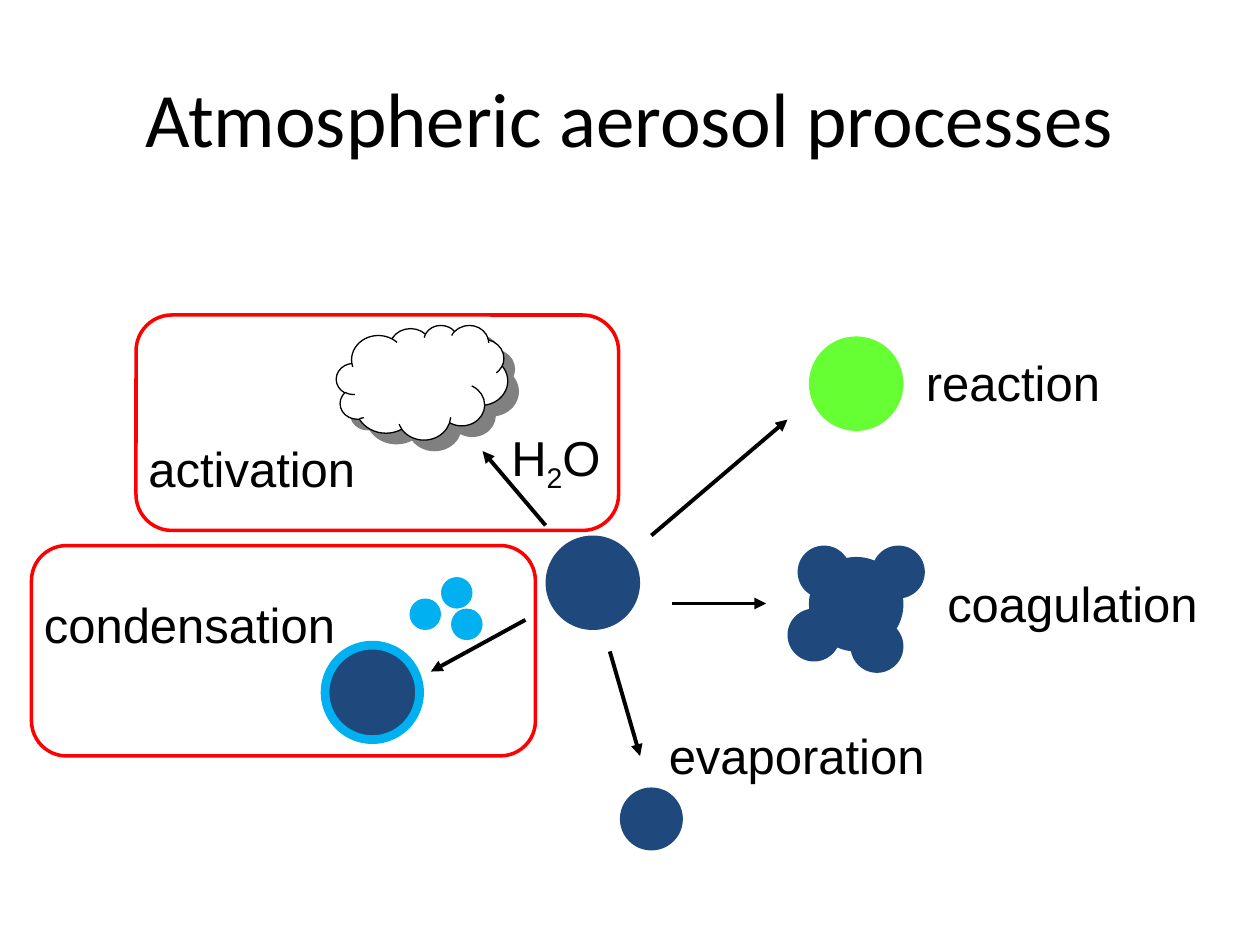
import dataclasses
import typing

import lxml.etree
import pptx
import pptx.dml.color
import pptx.enum.shapes
import pptx.enum.text
import pptx.oxml.ns
import pptx.util

Inches = pptx.util.Inches
Pt = pptx.util.Pt
Preset = pptx.enum.shapes.MSO_SHAPE


@dataclasses.dataclass(frozen=True)
class Theme:
    """Colours, fonts and sizes of the slide."""
    ink: str = "000000"
    paper: str = "FFFFFF"
    particle: str = "1F497D"
    vapour: str = "00B0F0"
    reacted: str = "66FF33"
    highlight: str = "FF0000"
    shade: str = "808080"
    title_font: str = "Calibri"
    label_font: str = "Arial"
    title_size: float = 44
    label_size: float = 28
    hairline: float = 0.75
    frame_line: float = 2
    arrow_line: float = 2.25
    coating_line: float = 5


THEME = Theme()


class Outline(typing.NamedTuple):
    colour: str
    width: float


class Figure(typing.NamedTuple):
    left: float
    top: float
    width: float
    height: float
    fill: typing.Optional[str] = None
    outline: typing.Optional[Outline] = None
    preset: Preset = Preset.OVAL


class Arrow(typing.NamedTuple):
    start: tuple[float, float]
    end: tuple[float, float]


class Label(typing.NamedTuple):
    left: float
    top: float
    width: float
    wording: tuple[str, ...]  # every second piece is a subscript


def disc(left: float, top: float, size: float, fill: str,
         outline: typing.Optional[Outline] = None) -> Figure:
    return Figure(left, top, size, size, fill, outline)


def rgb(colour: str) -> pptx.dml.color.RGBColor:
    return pptx.dml.color.RGBColor.from_string(colour)


def apply_format(target: typing.Any, values: dict[str, typing.Any]) -> None:
    for name, value in values.items():
        setattr(target, name, value)


def format_font(font: typing.Any, family: str, size: float) -> None:
    apply_format(font, {"name": family, "size": Pt(size)})
    font.color.rgb = rgb(THEME.ink)


def add_xml(parent: typing.Any, tag: str, **attributes: str) -> typing.Any:
    return lxml.etree.SubElement(parent, pptx.oxml.ns.qn(tag), attributes)


def draw_figure(shapes: typing.Any, figure: Figure) -> typing.Any:
    bounds = map(Inches, (figure.left, figure.top, figure.width, figure.height))
    shape = shapes.add_shape(figure.preset, *bounds)
    shape.shadow.inherit = False
    if figure.fill:
        shape.fill.solid()
        shape.fill.fore_color.rgb = rgb(figure.fill)
    else:
        shape.fill.background()
    if figure.outline:
        shape.line.color.rgb = rgb(figure.outline.colour)
        shape.line.width = Pt(figure.outline.width)
    else:
        shape.line.fill.background()
    return shape


def draw_cloud(shapes: typing.Any, figure: Figure) -> None:
    cloud = draw_figure(shapes, figure)
    effects = cloud._element.spPr.find(pptx.oxml.ns.qn("a:effectLst"))
    shadow = add_xml(effects, "a:outerShdw", blurRad="0", dist=str(Pt(8.5)),
                     dir=str(45 * 60000), algn="ctr", rotWithShape="0")
    add_xml(shadow, "a:srgbClr", val=THEME.shade)


def draw_arrow(shapes: typing.Any, arrow: Arrow) -> None:
    line = shapes.add_connector(pptx.enum.shapes.MSO_CONNECTOR.STRAIGHT,
                                *map(Inches, arrow.start + arrow.end))
    line.line.color.rgb = rgb(THEME.ink)
    line.line.width = Pt(THEME.arrow_line)
    add_xml(line.line._get_or_add_ln(), "a:tailEnd", type="triangle")
    add_xml(line._element.spPr, "a:effectLst")


def draw_label(shapes: typing.Any, label: Label) -> None:
    box = shapes.add_textbox(*map(Inches, (label.left, label.top, label.width, 0.57)))
    apply_format(box.text_frame, {
        "word_wrap": False,
        "auto_size": pptx.enum.text.MSO_AUTO_SIZE.SHAPE_TO_FIT_TEXT,
    })
    for index, piece in enumerate(label.wording):
        run = box.text_frame.paragraphs[0].add_run()
        run.text = piece
        format_font(run.font, THEME.label_font, THEME.label_size)
        if index % 2:
            run._r.get_or_add_rPr().set("baseline", "-25000")


def draw_title(slide: typing.Any, wording: str) -> None:
    title = slide.shapes.title
    apply_format(title, {"left": Inches(0.5), "top": Inches(0.3),
                         "width": Inches(9), "height": Inches(1.25)})
    title.text_frame.text = wording
    title.text_frame.vertical_anchor = pptx.enum.text.MSO_ANCHOR.MIDDLE
    heading = title.text_frame.paragraphs[0]
    heading.alignment = pptx.enum.text.PP_ALIGN.CENTER
    format_font(heading.runs[0].font, THEME.title_font, THEME.title_size)


FRAME = Outline(THEME.highlight, THEME.frame_line)
COATING = Outline(THEME.vapour, THEME.coating_line)
CLOUD = Figure(2.67, 2.58, 1.36, 0.91, THEME.paper,
               Outline(THEME.ink, THEME.hairline), Preset.CLOUD)
ATTACHED = [(6.33, 4.33), (6.92, 4.33), (6.75, 4.92), (6.25, 4.83)]
VAPOUR = [(3.25, 4.75), (3.5, 4.58), (3.58, 4.83)]

PARTICLES = [
    disc(4.33, 4.25, 0.75, THEME.particle),  # starting aerosol
    disc(6.42, 4.42, 0.75, THEME.particle),  # coagulation
    *(disc(left, top, 0.42, THEME.particle) for left, top in ATTACHED),
    disc(4.92, 6.25, 0.5, THEME.particle),  # evaporation
    *(disc(left, top, 0.25, THEME.vapour) for left, top in VAPOUR),
    disc(2.58, 5.12, 0.75, THEME.particle, COATING),  # condensation
    disc(6.42, 2.67, 0.75, THEME.reacted),  # reaction
]
ARROWS = [
    Arrow((5.33, 4.79), (6.08, 4.79)),  # coagulation
    Arrow((4.33, 4.17), (3.83, 3.58)),  # activation
    Arrow((4.84, 5.17), (5.08, 6)),  # evaporation
    Arrow((4.17, 4.92), (3.42, 5.33)),  # condensation
    Arrow((5.17, 4.25), (6.25, 3.33)),  # reaction
]
LABELS = [
    Label(7.42, 4.5, 2.43, ("coagulation",)),
    Label(3.96, 3.34, 0.96, ("H", "2", "O")),
    Label(1.08, 3.43, 2.05, ("activation",)),
    Label(5.21, 5.71, 2.46, ("evaporation",)),
    Label(0.25, 4.67, 2.76, ("condensation",)),
    Label(7.25, 2.75, 1.75, ("reaction",)),
]
FRAMES = [
    Figure(1.08, 2.5, 3.83, 1.71, None, FRAME, Preset.ROUNDED_RECTANGLE),
    Figure(0.25, 4.33, 4, 1.67, None, FRAME, Preset.ROUNDED_RECTANGLE),
]


def main() -> None:
    deck = pptx.Presentation()
    apply_format(deck, {"slide_width": Inches(10), "slide_height": Inches(7.5)})
    slide = deck.slides.add_slide(deck.slide_layouts.get_by_name("Title Only"))
    draw_title(slide, "Atmospheric aerosol processes")

    # Particles and cloud, then arrows and labels, then the red frames on top
    for particle in PARTICLES:
        draw_figure(slide.shapes, particle)
    draw_cloud(slide.shapes, CLOUD)
    for arrow in ARROWS:
        draw_arrow(slide.shapes, arrow)
    for label in LABELS:
        draw_label(slide.shapes, label)
    for frame in FRAMES:
        draw_figure(slide.shapes, frame)
    deck.save("out.pptx")


if __name__ == "__main__":
    main()
